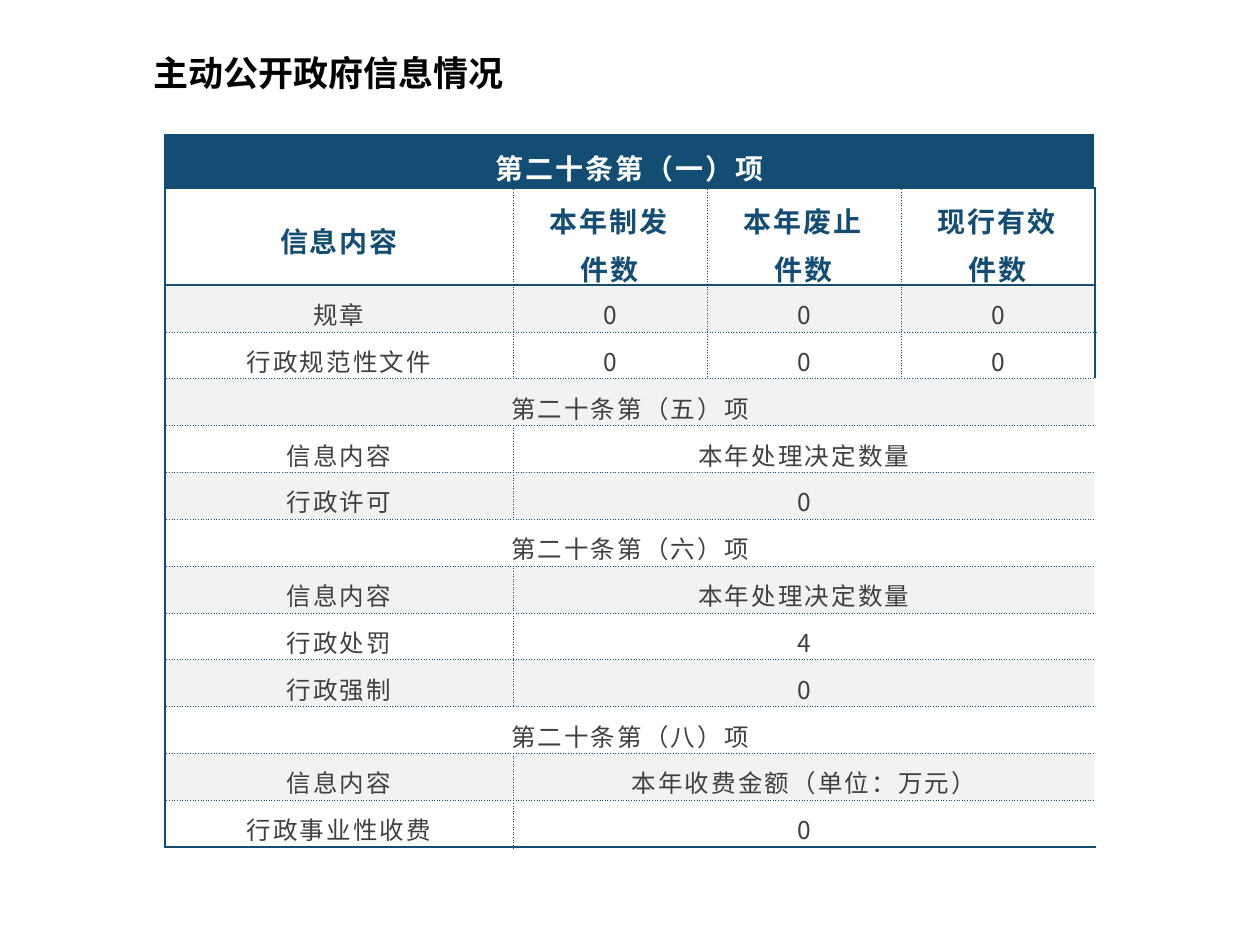
from lxml import etree
from pptx import Presentation, util as u
from pptx.dml import color
from pptx.enum import text
from pptx.oxml import ns

SCALE = u.Inches(1) / 126
COLORS = {"navy": "144D73", "white": "FFFFFF", "band": "F2F2F2",
          "body": "404040", "black": "000000"}
TABLE_FONT = "Noto Sans CJK SC"
ROWS = [
    ["第二十条第（一）项"],
    ["信息内容", "本年制发件数", "本年废止件数", "现行有效件数"],
    ["规章", "0", "0", "0"],
    ["行政规范性文件", "0", "0", "0"],
    ["第二十条第（五）项"],
    ["信息内容", "本年处理决定数量"],
    ["行政许可", "0"],
    ["第二十条第（六）项"],
    ["信息内容", "本年处理决定数量"],
    ["行政处罚", "4"],
    ["行政强制", "0"],
    ["第二十条第（八）项"],
    ["信息内容", "本年收费金额（单位：万元）"],
    ["行政事业性收费", "0"],
]
COLUMN_WIDTHS = [348, 194, 194, 194]
HEADER_HEIGHTS = [53, 97]
THICK_EDGES = {0, 1, 2, len(ROWS)}


def px(value):
    return u.Emu(round(value * SCALE))


def rgb(name):
    return color.RGBColor.from_string(COLORS[name])


def set_attributes(target, values):
    for name, value in values.items():
        setattr(target, name, value)


def add_run(paragraph, content, font_format, fill, east_asian, spacing=0):
    run = paragraph.add_run()
    run.text = content
    set_attributes(run.font, font_format)
    run.font.color.rgb = rgb(fill)
    properties = run.font._element
    if spacing:
        properties.set("spc", str(spacing))
    latin = properties.find(ns.qn("a:latin"))
    east_asian_font = etree.Element(ns.qn("a:ea"), typeface=east_asian)
    latin.addnext(east_asian_font)


def add_border(cell, side, thick):
    properties = cell._tc.get_or_add_tcPr()
    width = u.Pt(1.5 if thick else 0.25)
    line = etree.SubElement(properties, ns.qn(f"a:ln{side}"), w=str(width))
    fill = etree.SubElement(line, ns.qn("a:solidFill"))
    etree.SubElement(fill, ns.qn("a:srgbClr"), val=COLORS["navy"])
    etree.SubElement(line, ns.qn("a:prstDash"), val="solid" if thick else "dot")


def row_colors(row):
    if row == 0:
        return "navy", "white"
    if row == 1:
        return "white", "navy"
    return ("white" if row % 2 else "band"), "body"


def style_cell(cell, row, column, first, last):
    if column == first:
        add_border(cell, "L", first == 0)
    if column == last:
        add_border(cell, "R", last == len(COLUMN_WIDTHS) - 1)
    add_border(cell, "T", row in THICK_EDGES)
    add_border(cell, "B", row + 1 in THICK_EDGES)
    cell.fill.solid()
    cell.fill.fore_color.rgb = rgb(row_colors(row)[0])


def write_cell(cell, content, row):
    set_attributes(cell, {
        "margin_left": px(24), "margin_right": px(24),
        "margin_top": px(4), "margin_bottom": px(4),
        "vertical_anchor": text.MSO_ANCHOR.MIDDLE})
    paragraph = cell.text_frame.paragraphs[0]
    set_attributes(paragraph, {"alignment": text.PP_ALIGN.CENTER, "line_spacing": 1.2})
    header = row < len(HEADER_HEIGHTS)
    font_format = {"size": u.Pt(16 if header else 14), "bold": header, "name": TABLE_FONT}
    add_run(paragraph, content, font_format, row_colors(row)[1], TABLE_FONT, 120)


def add_title(slide, left, top, width, height):
    frame = slide.shapes.add_textbox(*map(px, (left, top, width, height))).text_frame
    set_attributes(frame, {"word_wrap": True,
                           "auto_size": text.MSO_AUTO_SIZE.SHAPE_TO_FIT_TEXT})
    paragraph = frame.paragraphs[0]
    paragraph._p.get_or_add_pPr().set("indent", str(px(57)))
    font_format = {"size": u.Pt(20), "bold": True, "name": "Arial"}
    add_run(paragraph, "主动公开政府信息情况", font_format, "black", TABLE_FONT)


def add_disclosure_table(slide, left, top, width, height):
    table = slide.shapes.add_table(
        len(ROWS), len(COLUMN_WIDTHS), *map(px, (left, top, width, height))).table
    set_attributes(table, {"first_row": False, "horz_banding": False})
    for column, column_width in zip(table.columns, COLUMN_WIDTHS):
        column.width = px(column_width)
    body_rows = len(ROWS) - len(HEADER_HEIGHTS)
    body_height = (height - sum(HEADER_HEIGHTS)) / body_rows
    for row, row_height in zip(table.rows, HEADER_HEIGHTS + [body_height] * body_rows):
        row.height = px(row_height)
    final = len(COLUMN_WIDTHS) - 1
    for row, contents in enumerate(ROWS):
        for first, content in enumerate(contents):
            last = final if first == len(contents) - 1 else first
            cell = table.cell(row, first)
            if last > first:
                cell.merge(table.cell(row, last))
            write_cell(cell, content, row)
            for column in range(first, last + 1):
                style_cell(table.cell(row, column), row, column, first, last)


def main():
    presentation = Presentation()
    set_attributes(presentation, {"slide_width": px(1260), "slide_height": px(945)})
    slide = presentation.slides.add_slide(presentation.slide_layouts[6])
    add_title(slide, 84, 45, 701, 55)
    add_disclosure_table(slide, 165, 135, 930, 712)
    presentation.save("out.pptx")


if __name__ == "__main__":
    main()
